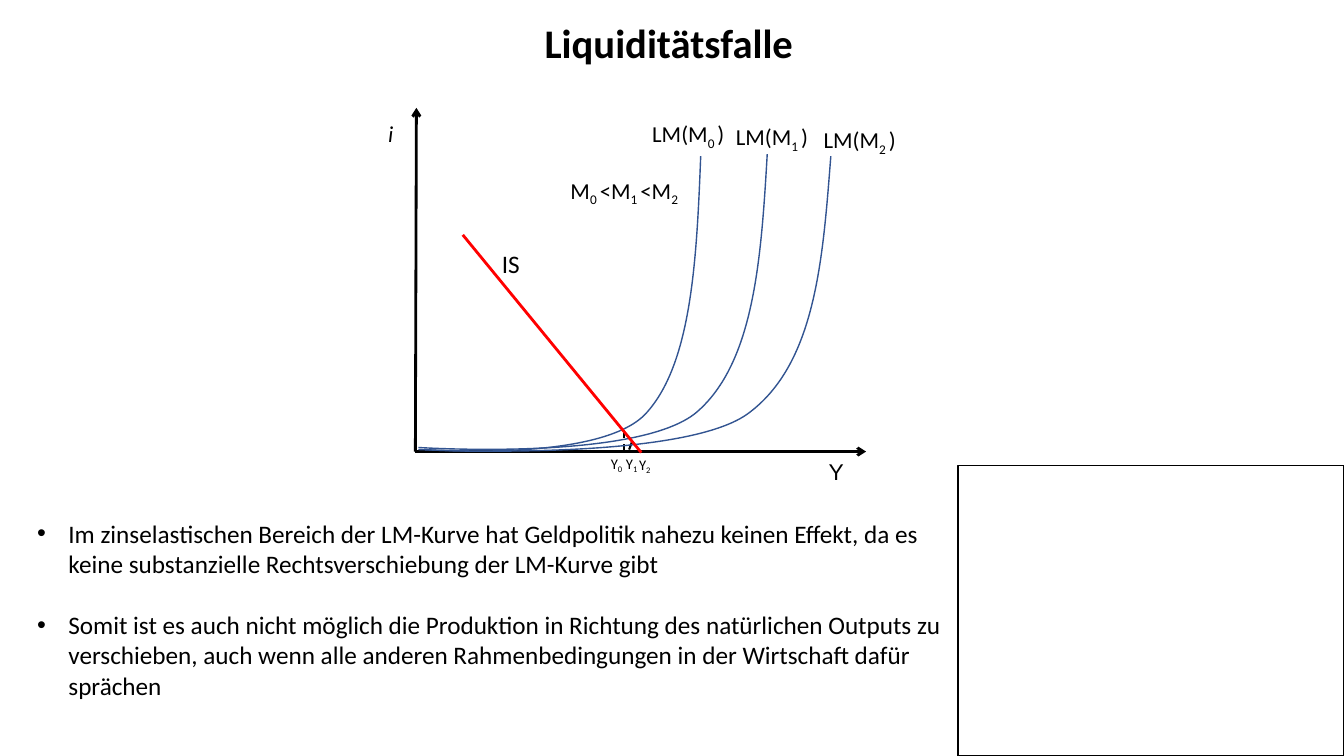
from dataclasses import dataclass

from lxml.etree import SubElement
from pptx import Presentation
from pptx.dml.color import RGBColor
from pptx.enum.dml import MSO_LINE as Dash
from pptx.enum.shapes import MSO_CONNECTOR as Connector, MSO_SHAPE as Shape
from pptx.enum.text import MSO_ANCHOR as Anchor, MSO_AUTO_SIZE as AutoSize, PP_ALIGN as Align
from pptx.oxml.ns import qn
from pptx.slide import Slide
from pptx.util import Inches, Pt

Point = tuple[float, float]


@dataclass(frozen=True)
class Theme:
    ink: RGBColor = RGBColor(0x00, 0x00, 0x00)
    lm_blue: RGBColor = RGBColor(0x32, 0x54, 0x91)
    is_red: RGBColor = RGBColor(0xFF, 0x00, 0x00)
    font: str = "Calibri"
    axis_font: str = "Arial"
    title: float = 29
    body: float = 18
    label: float = 16.3
    tick: float = 10.5


THEME = Theme()


@dataclass(frozen=True)
class Label:
    text: str
    left: float
    top: float
    width: float
    height: float = 0.38
    size: float = THEME.label
    font: str = THEME.font
    italic: bool = False
    wrap: bool = False


@dataclass(frozen=True)
class Segment:
    start: Point
    end: Point
    color: RGBColor = THEME.ink
    width: float = 2
    arrow: bool = False
    dashed: bool = False


@dataclass(frozen=True)
class Curve:
    top: Point
    steep: tuple[Point, Point]
    bend: Point
    flat: Point
    foot: Point
    height: float = 2.93


AXES = [
    Segment((4.12, 4.48), (8.59, 4.48), arrow=True),
    Segment((4.12, 4.48), (4.13, 1.07), arrow=True),
]
OUTPUT_MARKS = [
    Segment((6.19, 4.49), (6.19, 4.3), width=1.5, dashed=True),
    Segment((6.24, 4.46), (6.27, 4.38), width=1.5, dashed=True),
]
IS_LINE = Segment((4.59, 2.33), (6.36, 4.49), THEME.is_red)

LM_CURVES = [
    Curve((6.95, 1.55), ((6.91, 2.58), (6.86, 3.62)), (6.4, 4.11), (5.94, 4.59), (4.21, 4.46)),
    Curve((7.61, 1.53), ((7.55, 2.57), (7.48, 3.6)), (6.91, 4.09), (6.33, 4.58), (4.15, 4.44)),
    Curve((8.24, 1.55), ((8.16, 2.58), (8.09, 3.62)), (7.41, 4.11), (6.73, 4.59), (4.15, 4.46)),
]

LABELS = [
    Label("i", 3.75, 1.14, 0.25, italic=True),
    Label("Y", 8.12, 4.49, 0.35, font=THEME.axis_font),
    Label("Y|0", 5.96, 4.46, 0.57, 0.28, THEME.tick, wrap=True),
    Label("Y|1", 6.11, 4.46, 0.32, 0.28, THEME.tick),
    Label("Y|2", 6.24, 4.47, 0.4, 0.28, THEME.tick, wrap=True),
    Label("M|0 |<M|1 |<M|2", 5.56, 1.7, 1.32),
    Label("LM(M|0 |)", 6.37, 1.14, 0.94),
    Label("LM(M|1 |)", 7.2, 1.17, 0.94),
    Label("LM(M|2 |)", 8.07, 1.2, 0.94),
    Label("IS", 4.88, 2.41, 0.38, 0.4, THEME.body),
]

STATEMENTS = [
    "Im zinselastischen Bereich der LM-Kurve hat Geldpolitik nahezu keinen Effekt, "
    "da es keine substanzielle Rechtsverschiebung der LM-Kurve gibt",
    "Somit ist es auch nicht möglich die Produktion in Richtung des natürlichen Outputs "
    "zu verschieben, auch wenn alle anderen Rahmenbedingungen in der Wirtschaft dafür sprächen",
]


def style_font(font, size: float, name: str = THEME.font) -> None:
    font.name = name
    font.size = Pt(size)
    font.color.rgb = THEME.ink


def add_title(slide: Slide, text: str) -> None:
    title = slide.shapes.title
    title.left, title.top, title.width, title.height = map(Inches, (2.48, 0.01, 8.31, 0.81))
    frame = title.text_frame
    frame.text = text
    frame.vertical_anchor = Anchor.MIDDLE
    frame.auto_size = AutoSize.NONE
    frame.margin_left = frame.margin_right = Inches(0.09)
    frame.margin_top = frame.margin_bottom = Inches(0.04)
    heading = frame.paragraphs[0]
    heading.alignment = Align.CENTER
    style_font(heading.font, THEME.title)
    heading.font.bold = True


def add_segment(slide: Slide, segment: Segment) -> None:
    ends = map(Inches, (*segment.start, *segment.end))
    connector = slide.shapes.add_connector(Connector.STRAIGHT, *ends)
    connector.line.color.rgb = segment.color
    connector.line.width = Pt(segment.width)
    if segment.dashed:
        connector.line.dash_style = Dash.DASH
    if segment.arrow:
        SubElement(connector.line._get_or_add_ln(), qn("a:tailEnd"), type="arrow")
    SubElement(connector._element.spPr, qn("a:effectLst"))


def add_curve(slide: Slide, curve: Curve) -> None:
    builder = slide.shapes.build_freeform(*map(Inches, curve.top))
    corners = [tuple(map(Inches, corner)) for corner in (curve.bend, curve.foot)]
    builder.add_line_segments(corners, close=False)
    lm = builder.convert_to_shape()
    lm.height = Inches(curve.height)
    outline = next(lm._element.iter(qn("a:path")))
    outline.set("h", str(lm.height))
    for straight in outline.findall(qn("a:lnTo")):
        outline.remove(straight)
    for handles in ((*curve.steep, curve.bend), (curve.flat, curve.foot, curve.foot)):
        bow = SubElement(outline, qn("a:cubicBezTo"))
        for x, y in handles:
            SubElement(bow, qn("a:pt"), x=str(Inches(x) - lm.left), y=str(Inches(y) - lm.top))
    lm.shadow.inherit = False
    lm.fill.background()
    lm.line.color.rgb = THEME.lm_blue
    lm.line.width = Pt(1)


def add_label(slide: Slide, label: Label) -> None:
    place = map(Inches, (label.left, label.top, label.width, label.height))
    frame = slide.shapes.add_textbox(*place).text_frame
    frame.word_wrap = label.wrap
    frame.auto_size = AutoSize.SHAPE_TO_FIT_TEXT
    line = frame.paragraphs[0]
    style_font(line.font, label.size, label.font)
    line.font.italic = label.italic
    for index, part in enumerate(label.text.split("|")):
        run = line.add_run()
        run.text = part
        if index % 2:
            run.font._element.set("baseline", "-25000")


def add_statements(slide: Slide, statements: list[str]) -> None:
    frame = slide.shapes.add_textbox(*map(Inches, (0.27, 5.09, 9.18, 1.92))).text_frame
    frame.word_wrap = True
    frame.auto_size = AutoSize.SHAPE_TO_FIT_TEXT
    for index, statement in enumerate(statements):
        paragraph = frame.add_paragraph() if index else frame.paragraphs[0]
        paragraph.text = statement
        paragraph.space_before = Pt(22 if index else 0)
        style_font(paragraph.font, THEME.body)
        properties = paragraph._p.get_or_add_pPr()
        properties.set("marL", str(Inches(0.31)))
        properties.set("indent", str(Inches(-0.31)))
        bullet_font = properties.makeelement(qn("a:buFont"), {"typeface": "Arial"})
        bullet = properties.makeelement(qn("a:buChar"), {"char": "•"})
        properties.find(qn("a:defRPr")).addprevious(bullet_font)
        bullet_font.addnext(bullet)


def add_empty_frame(slide: Slide) -> None:
    frame = slide.shapes.add_shape(Shape.RECTANGLE, *map(Inches, (9.5, 4.62, 3.83, 2.88)))
    frame.shadow.inherit = False
    frame.fill.background()
    frame.line.color.rgb = THEME.ink
    frame.line.width = Pt(1)


def main() -> None:
    deck = Presentation()
    deck.slide_width, deck.slide_height = Inches(13.33), Inches(7.5)
    slide = deck.slides.add_slide(deck.slide_layouts[5])
    add_title(slide, "Liquiditätsfalle")
    for segment in AXES + OUTPUT_MARKS:
        add_segment(slide, segment)
    for curve in LM_CURVES:
        add_curve(slide, curve)
    add_segment(slide, IS_LINE)
    for label in LABELS:
        add_label(slide, label)
    add_statements(slide, STATEMENTS)
    add_empty_frame(slide)
    deck.save("out.pptx")


if __name__ == "__main__":
    main()
